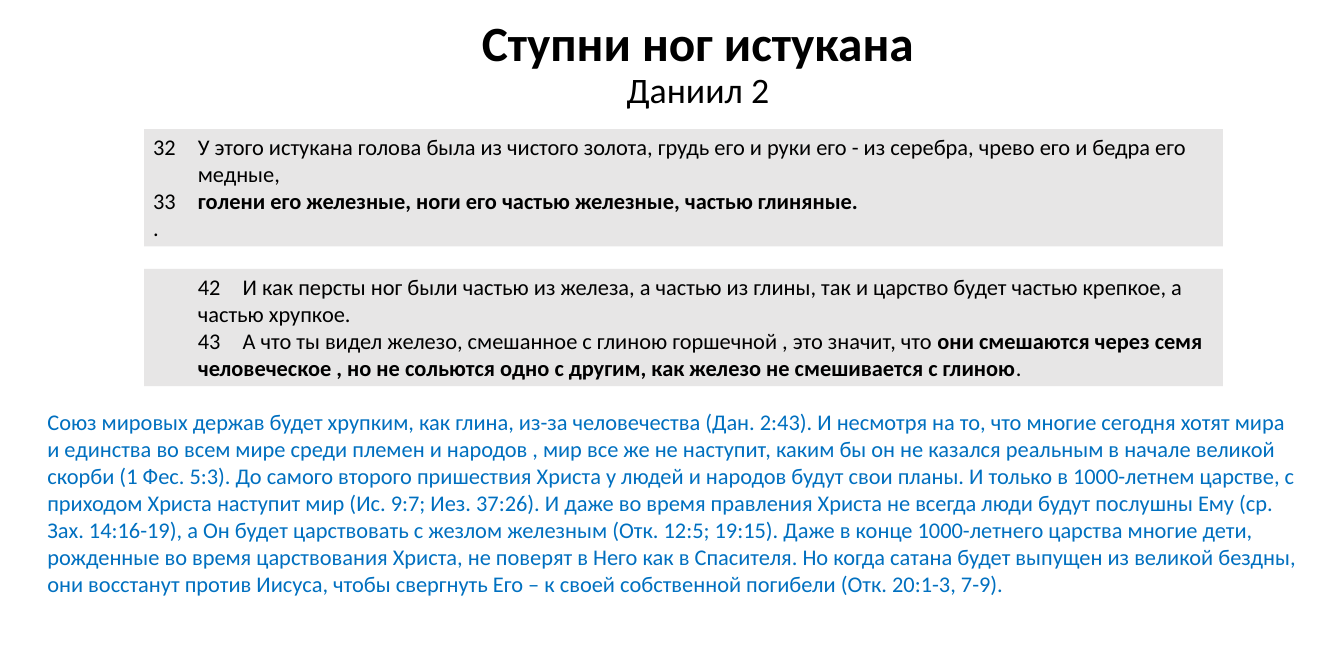
from copy import deepcopy
from lxml.etree import SubElement
from pptx import Presentation
from pptx.dml.color import RGBColor
from pptx.enum.shapes import MSO_SHAPE
from pptx.enum.text import MSO_ANCHOR, MSO_AUTO_SIZE, PP_ALIGN
from pptx.oxml.ns import qn
from pptx.util import Inches, Pt

THEME = {
    "font": "Calibri", "title": 39.6, "subtitle": 28.8, "body": 18,
    "ink": "000000", "panel": "E7E6E6", "comment": "0070C0",
}

deck = Presentation()
deck.slide_width, deck.slide_height = Inches(15), Inches(7.5)
column = deck.slide_width / 150
row = deck.slide_height / 75
hang = Inches(0.5)
page = deck.slides.add_slide(deck.slide_layouts[5])


def write(para, text, size="body", color="ink", bold=False):
    span = para.add_run()
    span.text = text
    values = {"name": THEME["font"], "size": Pt(THEME[size]), "bold": bold}
    for name, value in values.items():
        setattr(span.font, name, value)
    span.font.color.rgb = RGBColor.from_string(THEME[color])
    return span


def place(box, left, top, width, height, anchor, fit):
    values = {"left": left * column, "top": top * row,
              "width": width * column, "height": height * row}
    for name, value in values.items():
        setattr(box, name, int(value))
    frame = box.text_frame
    for name, value in {"word_wrap": True, "vertical_anchor": anchor, "auto_size": fit}.items():
        setattr(frame, name, value)
    return frame


title = place(page.shapes.title, 51.6, 0, 52.6, 14.5, MSO_ANCHOR.MIDDLE, MSO_AUTO_SIZE.NONE)
para = title.paragraphs[0]
para.alignment, para.line_spacing = PP_ALIGN.CENTER, 0.9
heading = write(para, "Ступни ног истукана", "title", bold=True)
para.add_line_break()
para._p.find(qn("a:br")).append(deepcopy(heading._r.rPr))
write(para, "Даниил 2", "subtitle")

verses = [
    (14.4, [
        [("У этого истукана голова была из чистого золота, грудь его и руки его - из серебра, чрево его и бедра его медные,", False)],
        [("33 \t", False), ("голени его железные, ноги его частью железные, частью глиняные.", True)],
        [(".", False)],
    ]),
    (30, [
        [("\t42\tИ как персты ног были частью из железа, а частью из глины, так и царство будет частью крепкое, а частью хрупкое.", False)],
        [("\t43\tА что ты видел железо, смешанное с глиною горшечной , это значит, что ", False),
         ("они смешаются через семя человеческое , но не сольются одно с другим, как железо не смешивается с глиною", True),
         (".", False)],
    ]),
]

for top, lines in verses:
    panel = page.shapes.add_shape(MSO_SHAPE.RECTANGLE, 0, 0, 0, 0)
    panel.shadow.inherit = False
    panel.fill.solid()
    panel.fill.fore_color.rgb = RGBColor.from_string(THEME["panel"])
    panel.line.fill.background()
    frame = place(panel, 16.1, top, 120.4, 13.1, MSO_ANCHOR.TOP, MSO_AUTO_SIZE.SHAPE_TO_FIT_TEXT)
    for index, spans in enumerate(lines):
        para = frame.add_paragraph() if index else frame.paragraphs[0]
        para.alignment = PP_ALIGN.LEFT
        layout = para._p.get_or_add_pPr()
        layout.set("marL", str(hang))
        layout.set("indent", str(-hang))
        if spans[0][0].startswith("\t"):
            stops = SubElement(layout, qn("a:tabLst"))
            for position, side in ((hang // 2, "r"), (hang, "l")):
                SubElement(stops, qn("a:tab"), pos=str(position), algn=side)
        elif index == 0:
            SubElement(layout, qn("a:buAutoNum"), type="arabicPlain", startAt="32")
        for text, bold in spans:
            write(para, text, bold=bold)

sentences = [
    "Союз мировых держав будет хрупким, как глина, из-за человечества (Дан. 2:43).",
    "И несмотря на то, что многие сегодня хотят мира и единства во всем мире среди племен и народов , "
    "мир все же не наступит, каким бы он не казался реальным в начале великой скорби (1 Фес. 5:3).",
    "До самого второго пришествия Христа у людей и народов будут свои планы.",
    "И только в 1000-летнем царстве, с приходом Христа наступит мир (Ис. 9:7; Иез. 37:26).",
    "И даже во время правления Христа не всегда люди будут послушны Ему (ср. Зах. 14:16-19), "
    "а Он будет царствовать с жезлом железным (Отк. 12:5; 19:15).",
    "Даже в конце 1000-летнего царства многие дети, рожденные во время царствования Христа, "
    "не поверят в Него как в Спасителя.",
    "Но когда сатана будет выпущен из великой бездны, они восстанут против Иисуса, "
    "чтобы свергнуть Его – к своей собственной погибели (Отк. 20:1-3, 7-9).",
]
comment = page.shapes.add_textbox(0, 0, 0, 0)
frame = place(comment, 4.3, 45.1, 141.5, 22.2, MSO_ANCHOR.TOP, MSO_AUTO_SIZE.SHAPE_TO_FIT_TEXT)
write(frame.paragraphs[0], " ".join(sentences), color="comment")

deck.save("out.pptx")
